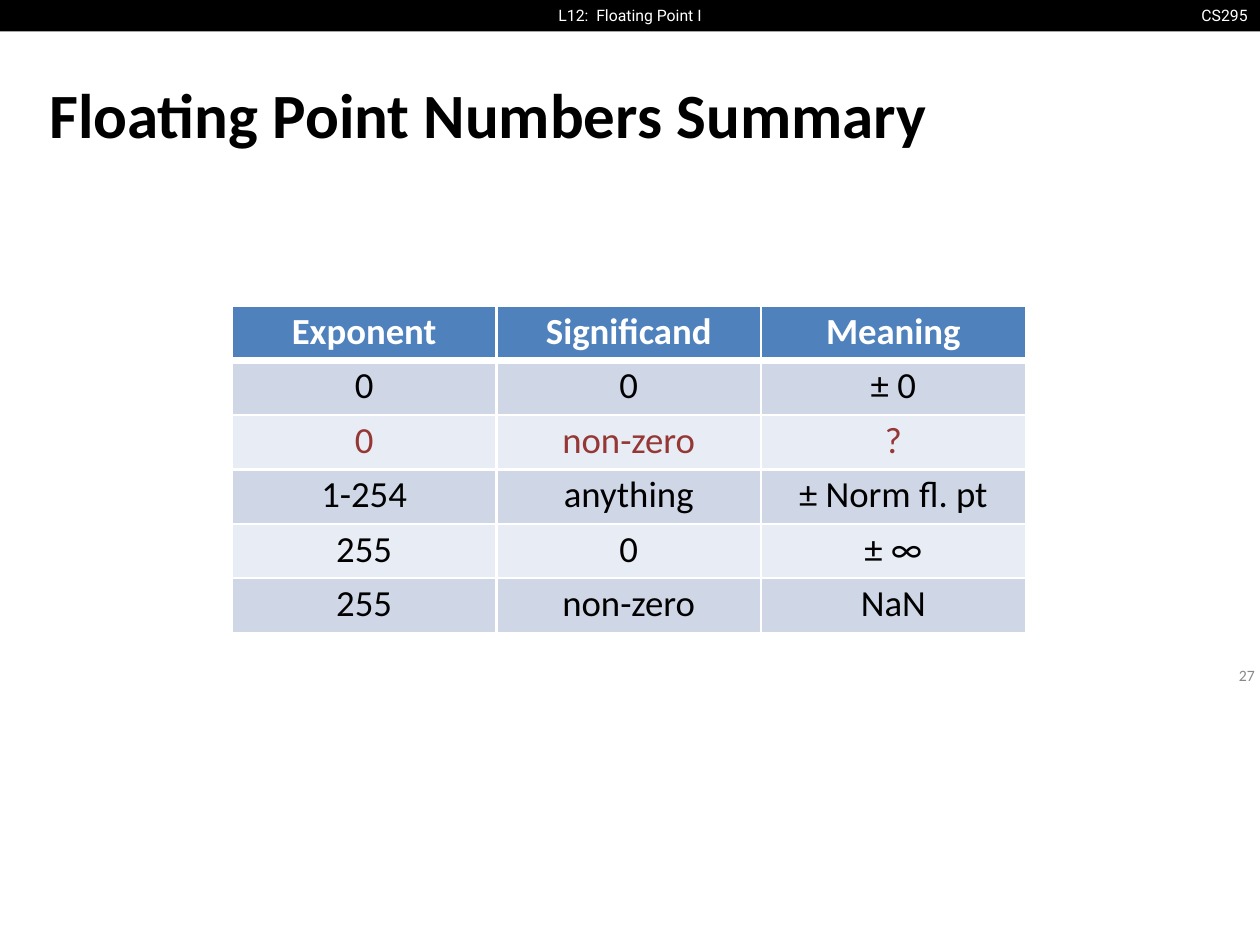
"""Build the slide that sums up floating point numbers."""
from dataclasses import dataclass
from typing import NamedTuple

from lxml import etree
from pptx import Presentation
from pptx.dml.color import RGBColor
from pptx.enum.shapes import MSO_SHAPE
from pptx.enum.text import MSO_ANCHOR, PP_ALIGN
from pptx.oxml.ns import qn
from pptx.util import Pt

RECT = MSO_SHAPE.RECTANGLE
TOP, MIDDLE = MSO_ANCHOR.TOP, MSO_ANCHOR.MIDDLE
LEFT, CENTER, RIGHT = PP_ALIGN.LEFT, PP_ALIGN.CENTER, PP_ALIGN.RIGHT


@dataclass(frozen=True)
class Theme:
    black: str = "000000"
    white: str = "FFFFFF"
    gray: str = "888888"
    red: str = "953735"
    head: str = "4F81BD"
    bands: tuple[str, str] = ("CFD7E7", "E8ECF4")
    font: str = "Calibri"
    bar_font: str = "Roboto"
    title: float = 36
    cell: float = 21
    small: float = 9
    line: float = 1.5
    rule: float = 4.25


class Box(NamedTuple):
    left: float
    top: float
    width: float
    height: float


class Label(NamedTuple):
    text: str
    box: Box
    align: PP_ALIGN
    font: str
    color: str
    anchor: MSO_ANCHOR
    pad: tuple[float, float]


class Row(NamedTuple):
    texts: tuple[str, str, str]
    fill: str
    color: str
    bold: bool = False
    above: float = 1.5
    below: float = 1.5


THEME = Theme()
DARK, PALE = THEME.bands
WIDE, HIGH = 720, 540
BAR = Box(0, 0, WIDE, 18)
TITLE = Box(28.2, 34.6, 661.7, 59.8)
GRID = Box(132.5, 175, 453.6, 186.6)

LABELS = (
    Label("CS295", Box(677.5, 0, 42.5, 18), RIGHT, THEME.bar_font, THEME.white, TOP, (7.2, 3.6)),
    Label("L12:  Floating Point I", Box(293, 0, 134, 18), CENTER, THEME.bar_font,
          THEME.white, TOP, (7.2, 3.6)),
    Label("27", Box(704.9, 379.4, 15.1, 13), LEFT, THEME.font, THEME.gray, MIDDLE, (3, 0)),
)

ROWS = (
    Row(("Exponent", "Significand", "Meaning"), THEME.head, THEME.white, True, below=THEME.rule),
    Row(("0", "0", "± 0"), DARK, THEME.black, above=THEME.rule),
    Row(("0", "non-zero", "?"), PALE, THEME.red),
    Row(("1-254", "anything", "± Norm fl. pt"), DARK, THEME.black),
    Row(("255", "0", "± ∞"), PALE, THEME.black),
    Row(("255", "non-zero", "NaN"), DARK, THEME.black),
)


def place(shape, box: Box) -> None:
    shape.left, shape.top, shape.width, shape.height = map(Pt, box)


def style(para, font: str, size: float, color: str, align: PP_ALIGN, bold: bool = False) -> None:
    para.alignment = align
    para.font.name = font
    para.font.size = Pt(size)
    para.font.bold = bold
    para.font.color.rgb = RGBColor.from_string(color)


def inset(frame, side: float, edge: float) -> None:
    frame.margin_left = frame.margin_right = Pt(side)
    frame.margin_top = frame.margin_bottom = Pt(edge)


def add_bar(slide) -> None:
    bar = slide.shapes.add_shape(RECT, *map(Pt, BAR))
    bar.shadow.inherit = False
    bar.fill.solid()
    bar.fill.fore_color.rgb = RGBColor.from_string(THEME.black)
    bar.line.fill.background()


def add_label(slide, label: Label) -> None:
    frame = slide.shapes.add_textbox(*map(Pt, label.box)).text_frame
    inset(frame, *label.pad)
    frame.vertical_anchor = label.anchor
    frame.text = label.text
    style(frame.paragraphs[0], label.font, THEME.small, label.color, label.align)


def add_title(slide, text: str) -> None:
    title = slide.shapes.title
    place(title, TITLE)
    frame = title.text_frame
    inset(frame, 0, 0)
    frame.word_wrap = True
    frame.vertical_anchor = MIDDLE
    frame.text = text
    style(frame.paragraphs[0], THEME.font, THEME.title, THEME.black, LEFT, True)


def add_edge(cell, tag: str, width: float) -> None:
    props = cell._tc.get_or_add_tcPr()
    line = etree.SubElement(props, qn(tag), w=str(Pt(width)))
    fill = etree.SubElement(line, qn("a:solidFill"))
    etree.SubElement(fill, qn("a:srgbClr"), val=THEME.white)


def fill_cell(cell, text: str, row: Row) -> None:
    edges = {"a:lnL": THEME.line, "a:lnR": THEME.line, "a:lnT": row.above, "a:lnB": row.below}
    for tag, width in edges.items():
        add_edge(cell, tag, width)
    cell.fill.solid()
    cell.fill.fore_color.rgb = RGBColor.from_string(row.fill)
    inset(cell, 0, 0)
    cell.margin_top = Pt(1.8)
    cell.text = text
    para = cell.text_frame.paragraphs[0]
    para.space_before = Pt(1.7)
    style(para, THEME.font, THEME.cell, row.color, CENTER, row.bold)


def add_grid(slide) -> None:
    table = slide.shapes.add_table(len(ROWS), len(ROWS[0].texts), *map(Pt, GRID)).table
    for y, row in enumerate(ROWS):
        for x, text in enumerate(row.texts):
            fill_cell(table.cell(y, x), text, row)


def main() -> None:
    deck = Presentation()
    deck.slide_width, deck.slide_height = Pt(WIDE), Pt(HIGH)
    slide = deck.slides.add_slide(deck.slide_layouts.get_by_name("Title Only"))
    add_bar(slide)
    add_title(slide, "Floating Point Numbers Summary")
    for label in LABELS:
        add_label(slide, label)
    add_grid(slide)
    deck.save("out.pptx")


if __name__ == "__main__":
    main()
